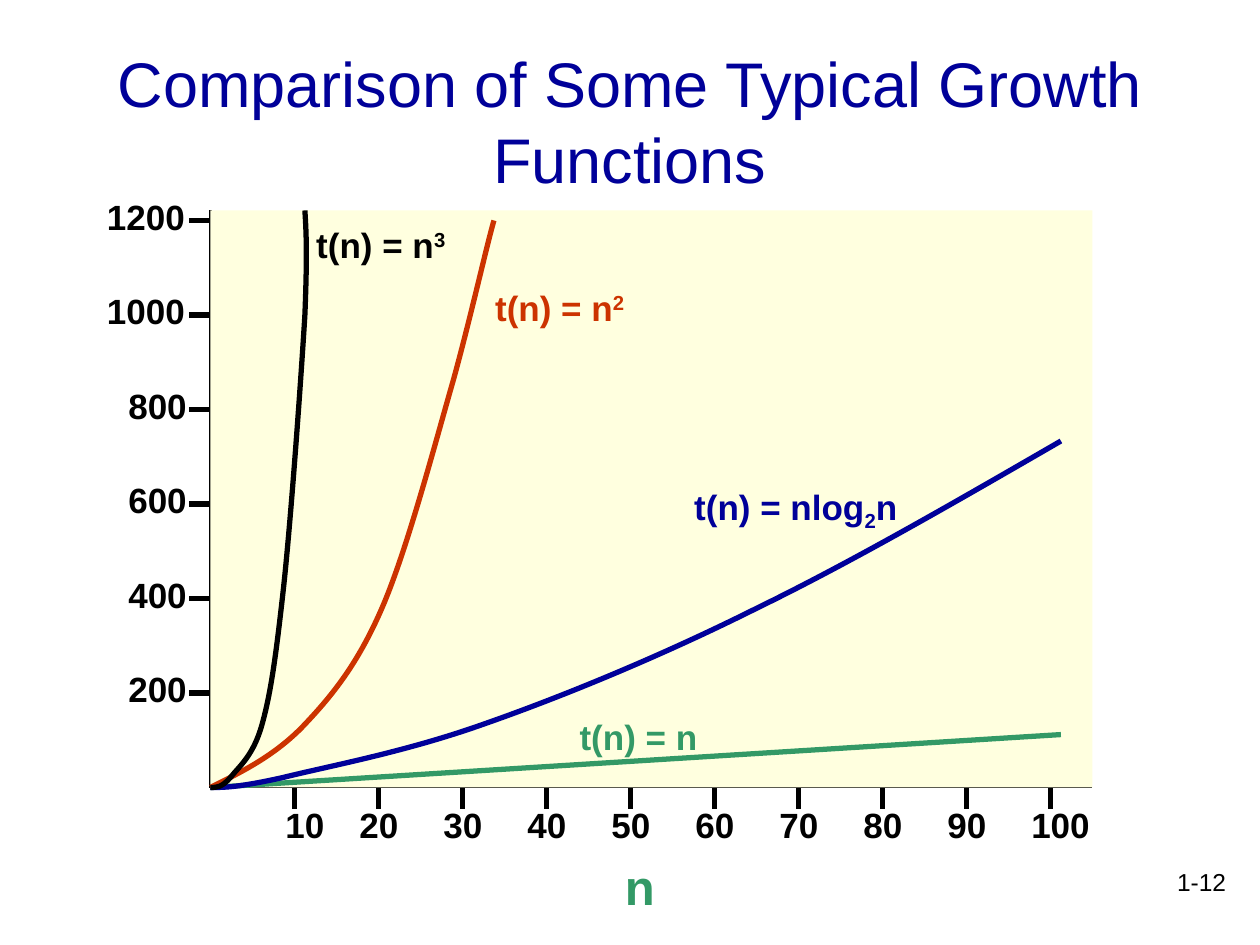
from dataclasses import dataclass
from itertools import chain

from lxml.etree import SubElement
from pptx import Presentation
from pptx.dml.color import RGBColor
from pptx.enum.shapes import MSO_CONNECTOR as Connector, MSO_SHAPE as Preset
from pptx.enum.text import MSO_ANCHOR as Anchor, PP_ALIGN as Align
from pptx.oxml.ns import qn
from pptx.util import Inches, Pt


@dataclass(frozen=True)
class Theme:
    font: str = "Arial"
    black: str = "000000"
    blue: str = "000099"
    red: str = "CC3300"
    green: str = "339966"
    plot: str = "FFFFDF"
    title_size: int = 36
    axis_title_size: int = 28
    label_size: int = 20
    number_size: int = 14
    curve_width: float = 3


def rgb(value):
    return RGBColor.from_string(value)


def write_run(paragraph, text, *, font, size, color, bold=False, baseline=0):
    run = paragraph.add_run()
    run.text = text
    run.font.name = font
    run.font.size = Pt(size)
    run.font.bold = bold
    run.font.color.rgb = rgb(color)
    if baseline:
        run.font._element.set("baseline", str(baseline * 1000))


def lines_to_cubics(shape):
    lines = list(shape._element.iter(qn("a:lnTo")))
    outline = lines[0].getparent()
    for index in range(0, len(lines), 3):
        cubic = SubElement(outline, qn("a:cubicBezTo"))
        for line in lines[index:index + 3]:
            cubic.append(line[0])
            outline.remove(line)


class SlideBuilder:
    def __init__(self, slide, theme):
        self.slide = slide
        self.theme = theme

    def text(self, left, top, width, height, parts, *, size, color, bold=True,
             align=Align.LEFT, anchor=Anchor.TOP, inset=(0.1, 0.05)):
        shape = self.slide.shapes.add_textbox(
            Inches(left), Inches(top), Inches(width), Inches(height))
        frame = shape.text_frame
        frame.word_wrap = True
        frame.vertical_anchor = anchor
        frame.margin_left, frame.margin_top = map(Inches, inset)
        paragraph = frame.paragraphs[0]
        paragraph.alignment = align
        for text, baseline in parts:
            write_run(paragraph, text, font=self.theme.font, size=size,
                      color=color, bold=bold, baseline=baseline)

    def line(self, start, end, color, width):
        connector = self.slide.shapes.add_connector(
            Connector.STRAIGHT, *map(Inches, (*start, *end)))
        connector.line.color.rgb = rgb(color)
        connector.line.width = Pt(width)
        SubElement(connector._element.spPr, qn("a:effectLst"))

    def rectangle(self, left, top, width, height, fill):
        shape = self.slide.shapes.add_shape(
            Preset.RECTANGLE, *map(Inches, (left, top, width, height)))
        shape.shadow.inherit = False
        shape.fill.solid()
        shape.fill.fore_color.rgb = rgb(fill)
        shape.line.fill.background()

    def curve(self, start, segments, color):
        builder = self.slide.shapes.build_freeform(*map(Inches, start))
        points = [tuple(map(Inches, point)) for point in chain.from_iterable(segments)]
        builder.add_line_segments(points, close=False)
        shape = builder.convert_to_shape()
        lines_to_cubics(shape)
        shape.shadow.inherit = False
        shape.fill.background()
        shape.line.color.rgb = rgb(color)
        shape.line.width = Pt(self.theme.curve_width)


LEFT, TOP, RIGHT, BOTTOM = 1.67, 1.67, 8.67, 6.25
ORIGIN = (LEFT, BOTTOM)

CURVES = (
    ("blue", (
        ((1.78, 6.25), (1.89, 6.25), (2.25, 6.17)),
        ((2.61, 6.08), (3.21, 5.97), (3.83, 5.75)),
        ((4.46, 5.53), (5.24, 5.21), (6, 4.83)),
        ((6.76, 4.46), (7.59, 3.98), (8.42, 3.5)),
    )),
    ("red", (
        ((1.91, 6.13), (2.16, 6.01), (2.39, 5.78)),
        ((2.62, 5.54), (2.83, 5.29), (3.03, 4.83)),
        ((3.23, 4.37), (3.45, 3.53), (3.6, 3.01)),
        ((3.74, 2.5), (3.86, 1.96), (3.92, 1.75)),
    )),
    ("black", (
        ((1.72, 6.25), (1.76, 6.25), (1.83, 6.17)),
        ((1.9, 6.08), (2.01, 6), (2.08, 5.75)),
        ((2.15, 5.5), (2.19, 5.21), (2.25, 4.67)),
        ((2.31, 4.12), (2.39, 3), (2.42, 2.5)),
        ((2.44, 2), (2.43, 1.83), (2.42, 1.67)),
    )),
)

FORMULAS = (
    (2.33, 1.67, 1.67, "black", (("t(n) = n", 0), ("3", 30))),
    (3.75, 2.17, 1.67, "red", (("t(n) = n", 0), ("2", 30))),
    (5.33, 3.75, 2.08, "blue", (("t(n) = nlog", 0), ("2", -25), ("n", 0))),
    (4.42, 5.58, 1.33, "green", (("t(n) = n", 0),)),
)


def draw_axes(builder):
    theme = builder.theme
    label = {"size": theme.label_size, "color": theme.black}
    builder.line((LEFT, TOP), ORIGIN, theme.black, 1.5)
    builder.line(ORIGIN, (RIGHT, BOTTOM), theme.black, 0.75)
    for index in range(1, 7):
        value = index * 200
        y = BOTTOM - index * 0.75
        left, width = (0.75, 0.83) if value >= 1000 else (0.92, 0.67)
        builder.line((1.5, y), (1.75, y), theme.black, 3)
        builder.text(left, y - 0.25, width, 0.43, ((str(value), 0),), **label)
    for index in range(1, 11):
        x = LEFT + index * 2 / 3
        offset = 0.17 if index == 1 else 0.25
        width = 0.67 if index == 10 else 0.58
        builder.line((x, 6.42), (x, 6.17), theme.black, 3)
        builder.text(x - offset, 6.33, width, 0.43, ((str(index * 10), 0),), **label)
    builder.text(4.75, 6.75, 0.58, 0.57, (("n", 0),), size=theme.axis_title_size,
                 color=theme.green, inset=(0.21, 0.05))


def draw_functions(builder):
    theme = builder.theme
    builder.rectangle(LEFT, TOP, RIGHT - LEFT, BOTTOM - TOP, theme.plot)
    builder.line((8.42, 5.83), ORIGIN, theme.green, theme.curve_width)
    for color, segments in CURVES:
        builder.curve(ORIGIN, segments, getattr(theme, color))
    for left, top, width, color, parts in FORMULAS:
        builder.text(left, top, width, 0.5, parts, size=theme.label_size,
                     color=getattr(theme, color), inset=(0.18, 0.1))


def main():
    presentation = Presentation()
    presentation.slide_width = Inches(10)
    presentation.slide_height = Inches(7.5)
    theme = Theme()
    builder = SlideBuilder(
        presentation.slides.add_slide(presentation.slide_layouts[6]), theme)
    builder.text(7.75, 6.83, 2.08, 0.5, (("1-12", 0),), size=theme.number_size,
                 color=theme.black, bold=False, align=Align.RIGHT)
    builder.text(0.75, 0.33, 8.5, 1.25,
                 (("Comparison of Some Typical Growth Functions", 0),),
                 size=theme.title_size, color=theme.blue, bold=False,
                 align=Align.CENTER, anchor=Anchor.MIDDLE)
    draw_axes(builder)
    draw_functions(builder)
    presentation.save("out.pptx")


if __name__ == "__main__":
    main()
